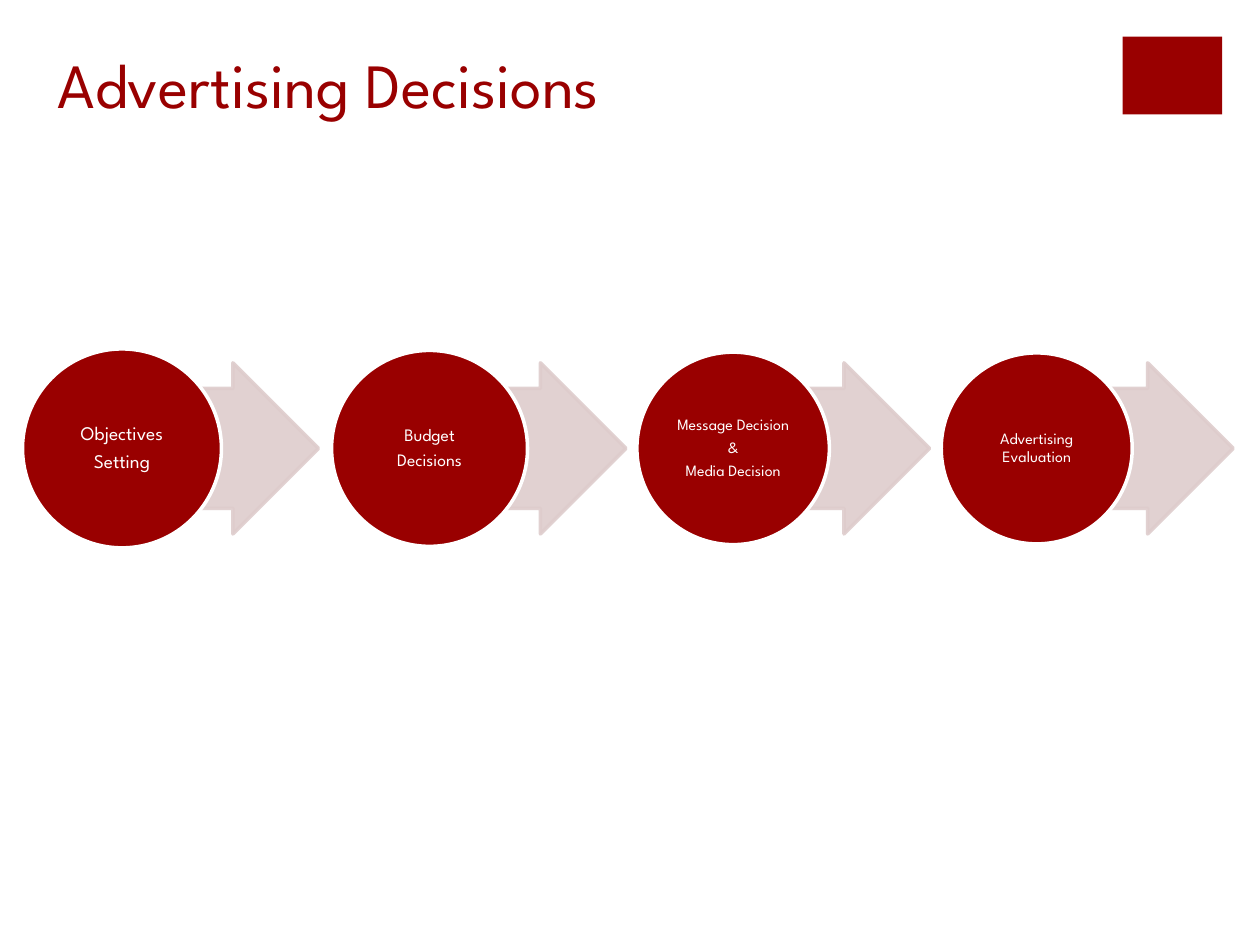
"""Build the Advertising Decisions process slide."""
from lxml import etree
from pptx import Presentation, util as u
from pptx.dml.color import RGBColor
from pptx.enum import shapes, text
from pptx.oxml.ns import qn

TITLE = "Advertising Decisions"
STEPS = [  # centre x, diameter, font size, lines
    (2.46, 4.01, 11, ["Objectives", "Setting"]),
    (8.66, 3.95, 10, ["Budget", "Decisions"]),
    (14.78, 3.88, 9, ["Message Decision", "&", "Media Decision"]),
    (20.9, 3.85, 9, ["Advertising Evaluation"]),
]
FONT, RED, PINK, WHITE = "League Spartan", "990000", "DECCCC", "FFFFFF"
MID_Y, ARROW_W, ARROW_H = 9.04, 3.96, 3.45


def paint(color_format, color, alpha=None):
    color_format.rgb = RGBColor.from_string(color)
    if alpha:
        clr = color_format._xFill.find(qn("a:srgbClr"))
        etree.SubElement(clr, qn("a:alpha")).set("val", str(alpha * 1000))


def add_shape(s, kind, x, y, w, h, fill, line=None, alpha=None):
    sp = s.shapes.add_shape(kind, u.Cm(x), u.Cm(y), u.Cm(w), u.Cm(h))
    sp.shadow.inherit = False
    sp.fill.solid()
    paint(sp.fill.fore_color, fill)
    if line:
        sp.line.width = u.Pt(2)
        paint(sp.line.color, line)
    else:
        sp.line.fill.background()
    if alpha:
        for clr in sp._element.spPr.iter(qn("a:srgbClr")):
            etree.SubElement(clr, qn("a:alpha")).set("val", str(alpha * 1000))
    return sp


def write(sp, lines, size, color, align, anchor, inset=None, spacing=None, after=0):
    tf = sp.text_frame
    tf.word_wrap = True
    tf.auto_size = text.MSO_AUTO_SIZE.NONE
    tf.vertical_anchor = anchor
    if inset is not None:
        tf.margin_left = tf.margin_right = tf.margin_top = tf.margin_bottom = u.Cm(inset)
    for i, line in enumerate(lines):
        p = tf.add_paragraph() if i else tf.paragraphs[0]
        p.alignment, p.line_spacing, p.space_after = align, spacing, u.Pt(after)
        r = p.add_run()
        r.text = line
        r.font.size, r.font.name = u.Pt(size), FONT
        paint(r.font.color, color)


def main():
    prs = Presentation()
    prs.slide_width, prs.slide_height = u.Cm(25.4), u.Cm(19.05)
    s = prs.slides.add_slide(prs.slide_layouts[5])

    title = s.shapes.title
    title.left, title.top, title.width, title.height = map(u.Cm, (0.91, 0.79, 20.27, 4.93))
    write(title, [TITLE], 36, RED, text.PP_ALIGN.LEFT, text.MSO_ANCHOR.TOP)
    add_shape(s, shapes.MSO_SHAPE.RECTANGLE, 22.63, 0.74, 2.01, 1.57, RED)

    for x, size, pt, lines in STEPS:
        arrow = add_shape(s, shapes.MSO_SHAPE.RIGHT_ARROW, x, MID_Y - ARROW_H / 2,
                          ARROW_W, ARROW_H, PINK, PINK, alpha=90)
        arrow.adjustments[0] = 0.7
        arrow.adjustments[1] = 0.5
        circle = add_shape(s, shapes.MSO_SHAPE.OVAL, x - size / 2, MID_Y - size / 2,
                           size, size, RED, WHITE)
        write(circle, lines, pt, WHITE, text.PP_ALIGN.CENTER, text.MSO_ANCHOR.MIDDLE,
              inset=0.03, spacing=0.9, after=round(pt * 0.35, 2))
    prs.save("out.pptx")


if __name__ == "__main__":
    main()
